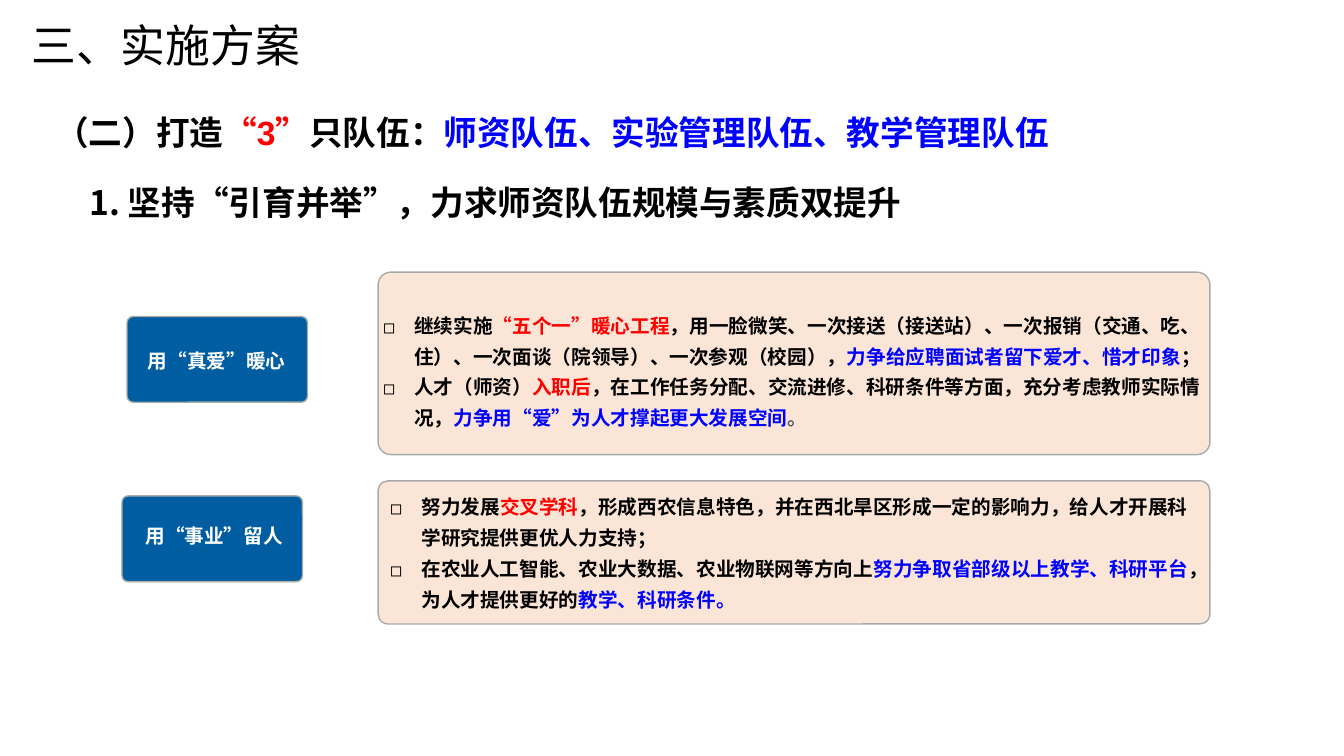
"""Build the slide on recruiting and keeping teaching staff."""
from lxml import etree
from pptx import Presentation
from pptx.dml.color import RGBColor
from pptx.enum.shapes import MSO_SHAPE
from pptx.enum.text import MSO_ANCHOR, MSO_AUTO_SIZE, PP_ALIGN
from pptx.oxml.ns import qn
from pptx.util import Pt

PX = 9144
CJK = "Noto Sans CJK SC"
COLORS = {
    "black": "000000", "white": "FFFFFF", "red": "FF0000", "blue": "0000FF",
    "grey": "53585F", "navy": "005DA2", "peach": "FBE5D6", "border": "A6AAA9",
}


def write(shape, box, paragraphs, size=14, bold=True, color="black", font=CJK,
          align=PP_ALIGN.LEFT, bullets=False):
    shape.left, shape.top, shape.width, shape.height = [value * PX for value in box]
    frame = shape.text_frame
    frame.word_wrap = True
    frame.vertical_anchor = MSO_ANCHOR.TOP
    frame.auto_size = MSO_AUTO_SIZE.NONE if bullets else MSO_AUTO_SIZE.SHAPE_TO_FIT_TEXT
    frame.margin_left = frame.margin_right = 0 if bullets else 10 * PX
    frame.margin_top = frame.margin_bottom = 0 if bullets else 5 * PX
    for index, runs in enumerate(paragraphs):
        paragraph = frame.add_paragraph() if index else frame.paragraphs[0]
        paragraph.alignment = align
        paragraph.line_spacing = Pt(22) if bullets else 1.0
        if bullets:
            properties = paragraph._p.get_or_add_pPr()
            properties.set("marL", str(31 * PX))
            properties.set("indent", str(-31 * PX))
            etree.SubElement(properties, qn("a:buFont"), typeface=CJK)
            etree.SubElement(properties, qn("a:buChar"), char="◻")
        for text, *style in runs:
            run = paragraph.add_run()
            run.text = text
            run.font.size = Pt(size)
            run.font.bold = bold
            run.font.color.rgb = RGBColor.from_string(COLORS[style[0] if style else color])
            run.font.name = style[1] if len(style) > 1 else font
            etree.SubElement(run.font._element, qn("a:ea"), typeface=CJK)


def add_panel(shapes, box, fill):
    panel = shapes.add_shape(MSO_SHAPE.ROUNDED_RECTANGLE, *[value * PX for value in box])
    panel.adjustments[0] = 0.07
    panel.shadow.inherit = False
    panel.fill.solid()
    panel.fill.fore_color.rgb = RGBColor.from_string(COLORS[fill])
    panel.line.color.rgb = RGBColor.from_string(COLORS["border"])
    panel.line.width = Pt(1)


presentation = Presentation()
presentation.slide_width = 1333 * PX
presentation.slide_height = 750 * PX
slide = presentation.slides.add_slide(presentation.slide_layouts[5])
shapes = slide.shapes

write(shapes.title, (21, 13, 449, 64), [[("三、实施方案",)]], size=32, bold=False)

headings = [
    ((45, 106, 1150, 50), [
        ("（二）",), ("打造", "black", "Arial"), ("“3”", "red", "Arial"),
        ("只队伍：", "black", "Arial"),
        ("师资队伍、实验管理队伍、教学管理队伍", "blue", "Arial")]),
    ((79, 176, 871, 50), [("1. 坚持“引育并举”，力求师资队伍规模与素质双提升",)]),
]
for box, runs in headings:
    write(shapes.add_textbox(0, 0, 0, 0), box, [runs], size=24)

measures = [
    ("用“真爱”暖心", (126, 314, 179, 85), (131, 341, 168, 34),
     (375, 270, 825, 181), (380, 304, 814, 143), [
        [("继续实施",), ("“五个一”暖心工程", "red"),
         ("，用一脸微笑、一次接送（接送站）、一次报销（交通、吃、住）、一次面谈（院领导）、一次参观（校园），",),
         ("力争给应聘面试者留下爱才、惜才印象", "blue"), ("；",)],
        [("人才（师资）",), ("入职后", "red"),
         ("，在工作任务分配、交流进修、科研条件等方面，充分考虑教师实际情况，",),
         ("力争用“爱”为人才撑起更大发展空间", "blue"), ("。", "grey")]]),
    ("用“事业”留人", (121, 492, 179, 85), (133, 515, 159, 34),
     (375, 477, 825, 142), (387, 484, 792, 138), [
        [("努力发展",), ("交叉学科", "red"),
         ("，形成西农信息特色，并在西北旱区形成一定的影响力，给人才开展科学研究提供更优人力支持；",)],
        [("在农业人工智能、农业大数据、农业物联网等方向上",),
         ("努力争取省部级以上教学、科研平台", "blue"),
         ("，为人才提供更好的",), ("教学、科研条件。", "blue")]]),
]
for label, label_panel, label_box, detail_panel, detail_box, details in measures:
    add_panel(shapes, label_panel, "navy")
    write(shapes.add_textbox(0, 0, 0, 0), label_box, [[(label,)]], color="white",
          align=PP_ALIGN.CENTER)
    add_panel(shapes, detail_panel, "peach")
    write(shapes.add_textbox(0, 0, 0, 0), detail_box, details, bullets=True)

presentation.save("out.pptx")
